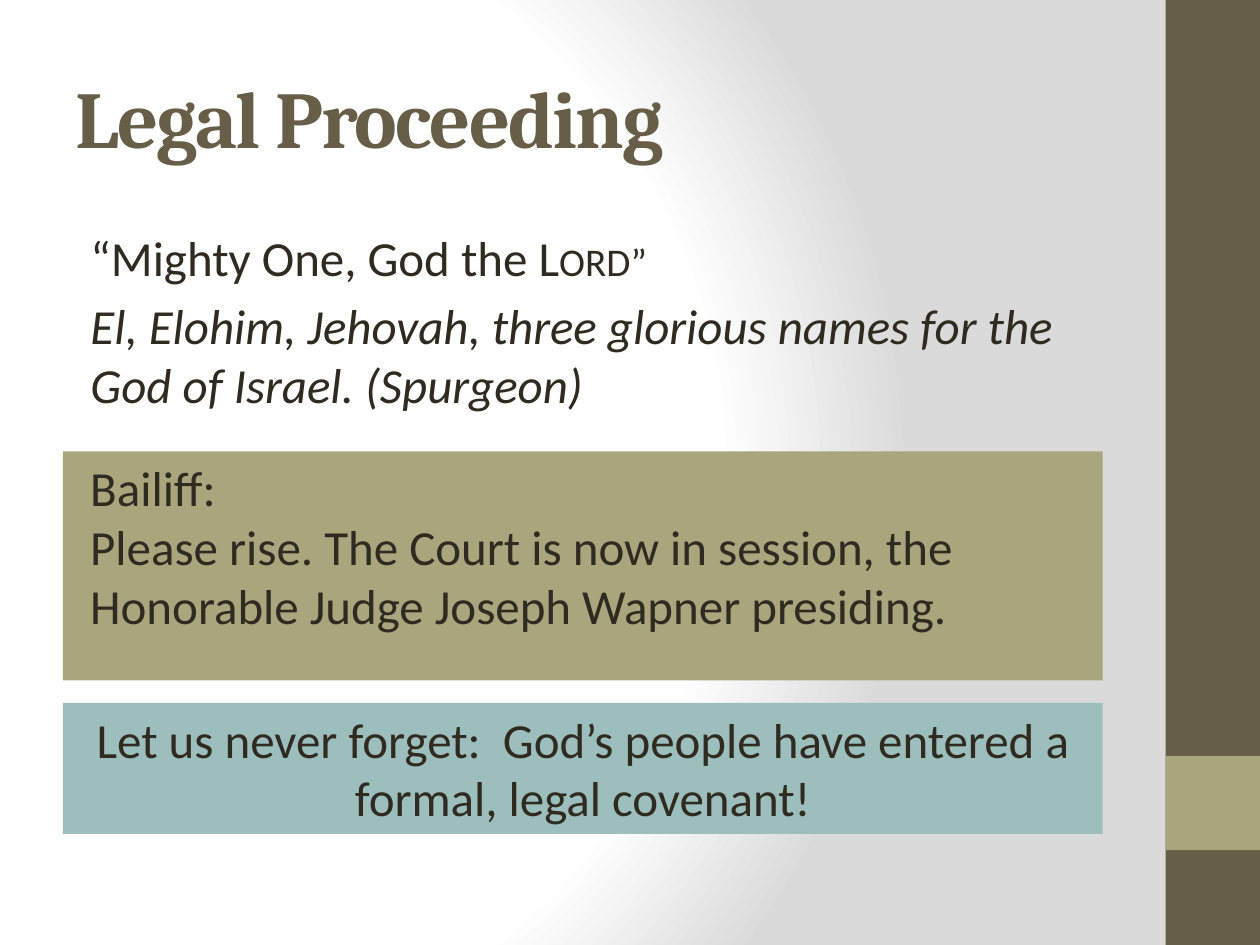
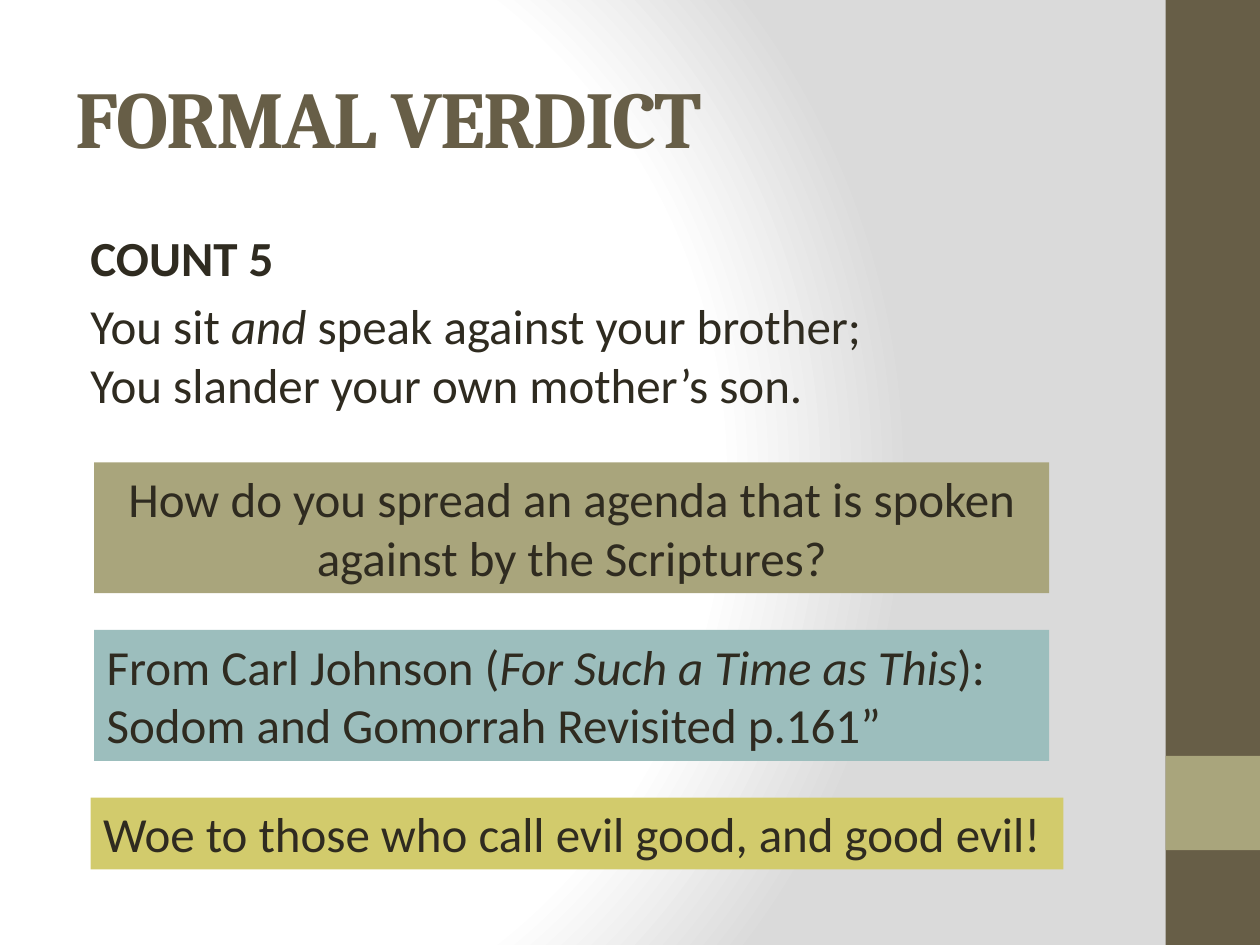
"""Build two slides on a legal proceeding and its formal verdict."""
from dataclasses import dataclass
from typing import Optional

from lxml.etree import SubElement, fromstring
from pptx import Presentation
from pptx.dml.color import RGBColor
from pptx.enum.shapes import MSO_SHAPE as Preset
from pptx.enum.text import MSO_ANCHOR as Anchor, MSO_AUTO_SIZE as AutoSize, PP_ALIGN as Align
from pptx.oxml.ns import nsdecls, qn
from pptx.util import Cm, Pt


@dataclass(frozen=True)
class Theme:
    brown: str = "675E47"
    olive: str = "A9A57C"
    teal: str = "9CBEBD"
    yellow: str = "D2CB6C"
    ink: str = "2F2B20"
    white: str = "FFFFFF"
    grey: str = "DADADA"
    title_face: str = "Cambria"
    text_face: str = "Calibri"
    title_size: int = 46
    text_size: int = 28
    title_tracking: int = -100


THEME = Theme()


@dataclass(frozen=True)
class Area:
    left: float
    top: float
    width: float
    height: float

    def lengths(self) -> tuple:
        return tuple(Cm(side) for side in (self.left, self.top, self.width, self.height))


@dataclass(frozen=True)
class Phrase:
    text: str
    bold: bool = False
    italic: bool = False
    small_caps: bool = False


@dataclass(frozen=True)
class Line:
    phrases: tuple
    indent: float = 0
    align: Align = Align.LEFT


@dataclass(frozen=True)
class Callout:
    area: Area
    color: str
    lines: tuple
    wrap: bool = True
    fitted: bool = True


@dataclass(frozen=True)
class Page:
    title: str
    verses: tuple
    callouts: tuple


@dataclass(frozen=True)
class Band:
    area: Area
    color: str


WIDTH, HEIGHT = 25.4, 19.05
BAND_LEFT, BAND_WIDTH = 23.5, 1.9
TITLE_AREA = Area(1.27, 0.76, 21.16, 3.18)
BODY_AREA = Area(1.27, 4.45, 21.16, 4.65)
INDENT = 0.3
TWO_LINES = 2.64

BANDS = (
    Band(Area(BAND_LEFT, 0, BAND_WIDTH, HEIGHT), THEME.brown),
    Band(Area(BAND_LEFT, 15.24, BAND_WIDTH, BAND_WIDTH), THEME.olive),
)


def line(*phrases, indent: float = 0, align: Align = Align.LEFT) -> Line:
    return Line(tuple(Phrase(p) if isinstance(p, str) else p for p in phrases), indent, align)


PAGES = (
    Page(
        "Legal Proceeding",
        (
            line("“Mighty One, God the ", Phrase("Lord”", small_caps=True), indent=INDENT),
            line(Phrase("El, Elohim, Jehovah, three glorious names for the God of Israel. "
                        "(Spurgeon)", italic=True), indent=INDENT),
        ),
        (
            Callout(Area(1.27, 9.1, 20.96, 4.62), THEME.olive, (
                line("Bailiff:", indent=INDENT),
                line("Please rise. The Court is now in session, the Honorable Judge "
                     "Joseph Wapner presiding.", indent=INDENT),
            ), fitted=False),
            Callout(Area(1.27, 14.17, 20.96, TWO_LINES), THEME.teal, (
                line("Let us never forget:  God’s people have entered a formal, "
                     "legal covenant!", align=Align.CENTER),
            )),
        ),
    ),
    Page(
        "FORMAL VERDICT",
        (
            line(Phrase("COUNT 5", bold=True), indent=INDENT),
            line("You sit ", Phrase("and", italic=True),
                 " speak against your brother;\nYou slander your own mother’s son.",
                 indent=INDENT),
        ),
        (
            Callout(Area(1.9, 9.32, 19.25, TWO_LINES), THEME.olive, (
                line("How do you spread an agenda that is spoken against by the Scriptures?",
                     align=Align.CENTER),
            )),
            Callout(Area(1.9, 12.7, 19.25, TWO_LINES), THEME.teal, (
                line("From Carl Johnson (", Phrase("For Such a Time as This", italic=True), "):"),
                line("Sodom and Gomorrah Revisited p.161”"),
            )),
            Callout(Area(1.83, 16.08, 19.61, 1.45), THEME.yellow, (
                line("Woe to those who call evil good, and good evil!"),
            ), wrap=False),
        ),
    ),
)


def place(shape, area: Area) -> None:
    shape.left, shape.top, shape.width, shape.height = area.lengths()


def set_font(font, face: str, size: int, color: str) -> None:
    font.name, font.size = face, Pt(size)
    font.color.rgb = RGBColor.from_string(color)


def write_phrase(paragraph, phrase: Phrase) -> None:
    for index, part in enumerate(phrase.text.split("\n")):
        if index:
            paragraph.add_line_break()
        run = paragraph.add_run()
        run.text = part
        set_font(run.font, THEME.text_face, THEME.text_size, THEME.ink)
        run.font.bold, run.font.italic = phrase.bold, phrase.italic
        if phrase.small_caps:
            run.font._element.set("cap", "small")


def write_lines(frame, lines: tuple) -> None:
    for index, content in enumerate(lines):
        paragraph = frame.add_paragraph() if index else frame.paragraphs[0]
        paragraph.alignment = content.align
        properties = paragraph._p.get_or_add_pPr()
        properties.set("marL", str(Cm(content.indent)))
        properties.set("indent", "0")
        SubElement(properties, qn("a:buNone"))
        set_font(paragraph.font, THEME.text_face, THEME.text_size, THEME.ink)
        for phrase in content.phrases:
            write_phrase(paragraph, phrase)


def write_title(heading, text: str) -> None:
    place(heading, TITLE_AREA)
    frame = heading.text_frame
    frame.text = text
    frame.vertical_anchor, frame.auto_size = Anchor.MIDDLE, AutoSize.NONE
    paragraph = frame.paragraphs[0]
    paragraph.alignment = Align.LEFT
    run = paragraph.runs[0]
    for font in (paragraph.font, run.font):
        set_font(font, THEME.title_face, THEME.title_size, THEME.brown)
        font.bold = True
    run.font._element.set("spc", str(THEME.title_tracking))


def draw_callout(slide, callout: Callout) -> None:
    panel = slide.shapes.add_textbox(*callout.area.lengths())
    panel.fill.solid()
    panel.fill.fore_color.rgb = RGBColor.from_string(callout.color)
    frame = panel.text_frame
    frame.word_wrap = callout.wrap
    frame.auto_size = AutoSize.SHAPE_TO_FIT_TEXT if callout.fitted else AutoSize.NONE
    write_lines(frame, callout.lines)


def paint_background(master) -> None:
    master.background.fill.solid()
    solid = master.element.find(".//" + qn("p:bgPr")).find(qn("a:solidFill"))
    stops = "".join(
        f'<a:gs pos="{position * 1000}"><a:srgbClr val="{color}"/></a:gs>'
        for position, color in ((0, THEME.white), (75, THEME.white), (100, THEME.grey))
    )
    gradient = fromstring(
        f'<a:gradFill {nsdecls("a")} rotWithShape="1"><a:gsLst>{stops}</a:gsLst>'
        '<a:path path="circle"><a:fillToRect l="20000" t="50000" r="100000" b="50000"/>'
        "</a:path></a:gradFill>"
    )
    solid.getparent().replace(solid, gradient)


def move_bands_to_master(slide, master) -> None:
    for number, band in enumerate(BANDS, start=20):
        stripe = slide.shapes.add_shape(Preset.RECTANGLE, *band.area.lengths())
        stripe.shadow.inherit = False
        stripe.fill.solid()
        stripe.fill.fore_color.rgb = RGBColor.from_string(band.color)
        stripe.line.fill.background()
        stripe.element.find(".//" + qn("p:cNvPr")).set("id", str(number))
        master.shapes.element.append(stripe.element)


def build_page(deck, page: Page, master: Optional[object] = None) -> None:
    slide = deck.slides.add_slide(deck.slide_layouts[1])
    if master is not None:
        move_bands_to_master(slide, master)
    write_title(slide.shapes.title, page.title)
    verses = slide.placeholders[1]
    place(verses, BODY_AREA)
    verses.text_frame.auto_size = AutoSize.NONE
    write_lines(verses.text_frame, page.verses)
    for callout in page.callouts:
        draw_callout(slide, callout)


def main() -> None:
    deck = Presentation()
    deck.slide_width, deck.slide_height = Cm(WIDTH), Cm(HEIGHT)
    paint_background(deck.slide_master)
    for index, page in enumerate(PAGES):
        build_page(deck, page, None if index else deck.slide_master)
    deck.save("out.pptx")


if __name__ == "__main__":
    main()
